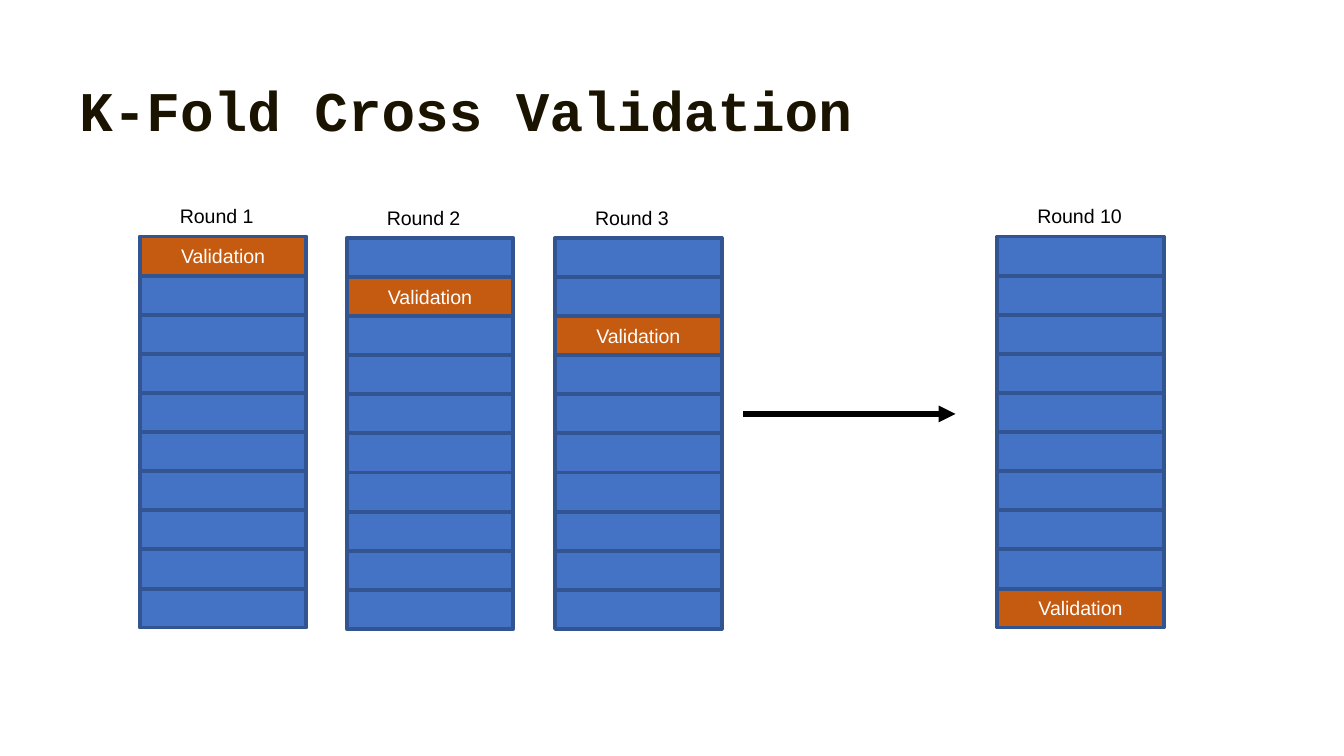
from dataclasses import dataclass

from pptx import Presentation
from pptx.dml.color import RGBColor
from pptx.enum import shapes, text
from pptx.oxml.ns import qn
from pptx.util import Inches, Pt
from lxml import etree


@dataclass(frozen=True)
class Theme:
    title: str = "191300"
    train: str = "4472C4"
    valid: str = "C55A11"
    edge: str = "325491"
    ink: str = "000000"
    light: str = "FFFFFF"
    head: str = "Courier New"
    body: str = "Arial"
    big: float = 30
    small: float = 10.5


THEME = Theme()
FOLDS = 10
WIDTH, HEIGHT = 1.24, 0.29
STEP = 2.62 / (FOLDS - 1)

# Round number, left and top of its column
ROUNDS = [(1, 1.04, 1.76), (2, 2.58, 1.77), (3, 4.13, 1.77), (10, 7.42, 1.76)]


def rgb(code):
    return RGBColor.from_string(code)


def style(para, face, size, color, bold=False):
    for run in para.runs:
        run.font.name = face
        run.font.size = Pt(size)
        run.font.bold = bold
        run.font.color.rgb = rgb(color)


def add_title(slide, words):
    title = slide.shapes.title
    title.left, title.top = Inches(0.49), Inches(0.03)
    title.width, title.height = Inches(8.96), Inches(1.09)
    frame = title.text_frame
    frame.text = words
    frame.vertical_anchor = text.MSO_ANCHOR.BOTTOM
    para = frame.paragraphs[0]
    para.alignment = text.PP_ALIGN.LEFT
    para.line_spacing = 0.9
    style(para, THEME.head, THEME.big, THEME.title, bold=True)


def add_fold(group, left, top, held):
    fold = group.shapes.add_shape(
        shapes.MSO_SHAPE.RECTANGLE,
        Inches(left), Inches(top), Inches(WIDTH), Inches(HEIGHT))
    fold.shadow.inherit = False
    fold.fill.solid()
    fold.fill.fore_color.rgb = rgb(THEME.valid if held else THEME.train)
    fold.line.color.rgb = rgb(THEME.edge)
    fold.line.width = Pt(2)
    if held:
        frame = fold.text_frame
        frame.text = "Validation"
        frame.vertical_anchor = text.MSO_ANCHOR.MIDDLE
        para = frame.paragraphs[0]
        para.alignment = text.PP_ALIGN.CENTER
        style(para, THEME.body, THEME.small, THEME.light)


def add_label(group, left, top, words):
    box = group.shapes.add_textbox(
        Inches(left), Inches(top), Inches(1.34), Inches(0.28))
    frame = box.text_frame
    frame.word_wrap = True
    frame.text = words
    style(frame.paragraphs[0], THEME.body, THEME.small, THEME.ink)


def add_round(slide, number, left, top):
    group = slide.shapes.add_group_shape()
    for row in range(FOLDS):
        add_fold(group, left, top + row * STEP, held=row == number - 1)
    add_label(group, left + 0.2, top - 0.29, f"Round {number}")


def add_arrow(slide, left, right, top):
    arrow = slide.shapes.add_connector(
        shapes.MSO_CONNECTOR.STRAIGHT,
        Inches(left), Inches(top), Inches(right), Inches(top))
    arrow.line.color.rgb = rgb(THEME.ink)
    arrow.line.width = Pt(3)
    props = arrow.element.spPr
    etree.SubElement(props.find(qn("a:ln")), qn("a:tailEnd"), type="triangle")
    etree.SubElement(props, qn("a:effectLst"))


def main():
    # Widescreen slide, 16 by 9
    deck = Presentation()
    deck.slide_width = Inches(10)
    deck.slide_height = Inches(10 * 9 / 16)
    slide = deck.slides.add_slide(deck.slide_layouts[5])

    add_title(slide, "K-Fold Cross Validation")

    # Columns of folds, with an arrow over the skipped rounds
    for number, left, top in ROUNDS:
        add_round(slide, number, left, top)
    add_arrow(slide, 5.53, 7.11, 3.08)

    deck.save("out.pptx")


if __name__ == "__main__":
    main()
